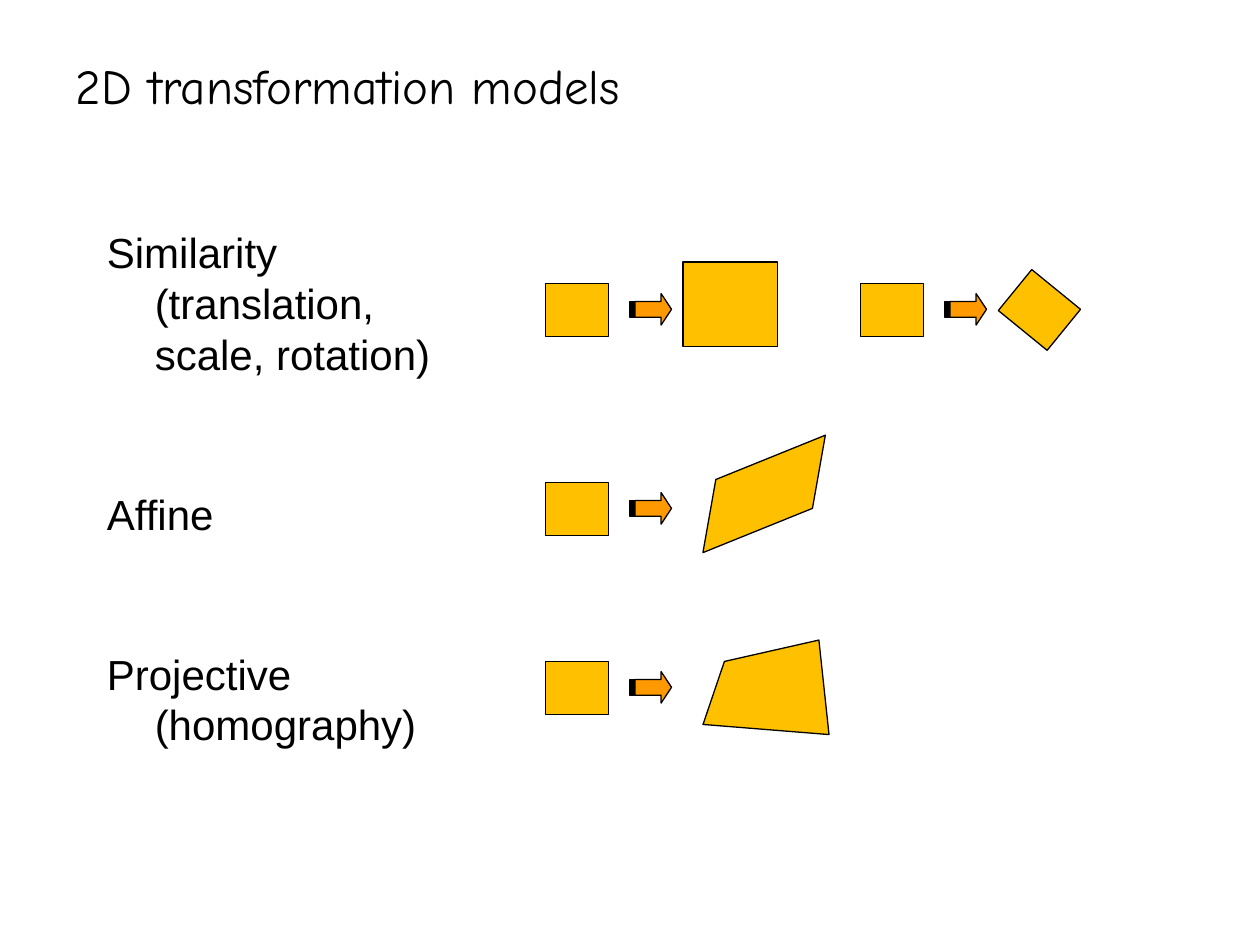
"""Build the slide on 2D transformation models."""
from pptx import Presentation
from pptx.dml.color import RGBColor
from pptx.enum.shapes import MSO_SHAPE
from pptx.enum.text import MSO_ANCHOR, PP_ALIGN
from pptx.util import Inches, Pt

RECTANGLE = MSO_SHAPE.RECTANGLE
PARALLELOGRAM = MSO_SHAPE.PARALLELOGRAM
ARROW = MSO_SHAPE.STRIPED_RIGHT_ARROW
BLACK, GOLD, ORANGE = "000000", "FFC000", "FF9900"


def color(value):
    return RGBColor.from_string(value)


def paint(shape, fill):
    shape.shadow.inherit = False
    shape.fill.solid()
    shape.fill.fore_color.rgb = color(fill)
    shape.line.color.rgb = color(BLACK)
    shape.line.width = Pt(0.75)


deck = Presentation()
deck.slide_width, deck.slide_height = Inches(10), Inches(7.5)
page = deck.slides.add_slide(deck.slide_layouts[5])

title = page.shapes.title
title.left, title.top = Inches(0.5), Inches(0.17)
title.width, title.height = Inches(9), Inches(1)
title.text_frame.text = "2D transformation models"
title.text_frame.vertical_anchor = MSO_ANCHOR.MIDDLE
heading = title.text_frame.paragraphs[0]
heading.alignment = PP_ALIGN.LEFT
heading.runs[0].font.name = "Comic Neue"
heading.runs[0].font.size = Pt(28)
heading.runs[0].font.color.rgb = color(BLACK)

models = [
    "Similarity\v(translation, \vscale, rotation)",
    "Affine",
    "Projective\v(homography)",
]
model_gaps = [0, 62.6, 62.6]
box = page.shapes.add_textbox(Inches(0.75), Inches(1.75), Inches(8.75), Inches(5.75))
frame = box.text_frame
frame.word_wrap = True
for index, (model, gap) in enumerate(zip(models, model_gaps)):
    para = frame.add_paragraph() if index else frame.paragraphs[0]
    para.text = model
    para.line_spacing = Pt(28.9)
    para.space_before = Pt(gap)
    properties = para._p.get_or_add_pPr()
    properties.set("marL", str(Inches(0.38)))
    properties.set("indent", str(-Inches(0.38)))
    for span in para.runs:
        span.font.name = "Arial"
        span.font.size = Pt(24)
        span.font.color.rgb = color(BLACK)

for left, top in [(4.33, 2.25), (6.83, 2.25), (4.33, 3.83), (4.33, 5.25)]:
    square = page.shapes.add_shape(
        RECTANGLE, Inches(left), Inches(top), Inches(0.5), Inches(0.42))
    paint(square, GOLD)
    arrow = page.shapes.add_shape(
        ARROW, Inches(left + 0.67), Inches(top + 0.08), Inches(0.33), Inches(0.25))
    arrow.adjustments[0] = 0.5
    arrow.adjustments[1] = 0.33
    paint(arrow, ORANGE)

results = [
    (RECTANGLE, 5.42, 2.08, 0.75, 0.67, 0),
    (RECTANGLE, 8, 2.25, 0.5, 0.42, 39.2),
    (PARALLELOGRAM, 5.44, 3.67, 1.25, 0.5, 338),
]
for kind, left, top, width, height, angle in results:
    result = page.shapes.add_shape(
        kind, Inches(left), Inches(top), Inches(width), Inches(height))
    result.rotation = angle
    if kind == PARALLELOGRAM:
        result.adjustments[0] = 0.625
    paint(result, GOLD)

corners = [(5.58, 5.75), (5.75, 5.25), (6.5, 5.08), (6.58, 5.83)]
points = [(Inches(x), Inches(y)) for x, y in corners]
outline = page.shapes.build_freeform(*points[0])
outline.add_line_segments(points[1:], close=True)
paint(outline.convert_to_shape(), GOLD)

deck.save("out.pptx")
